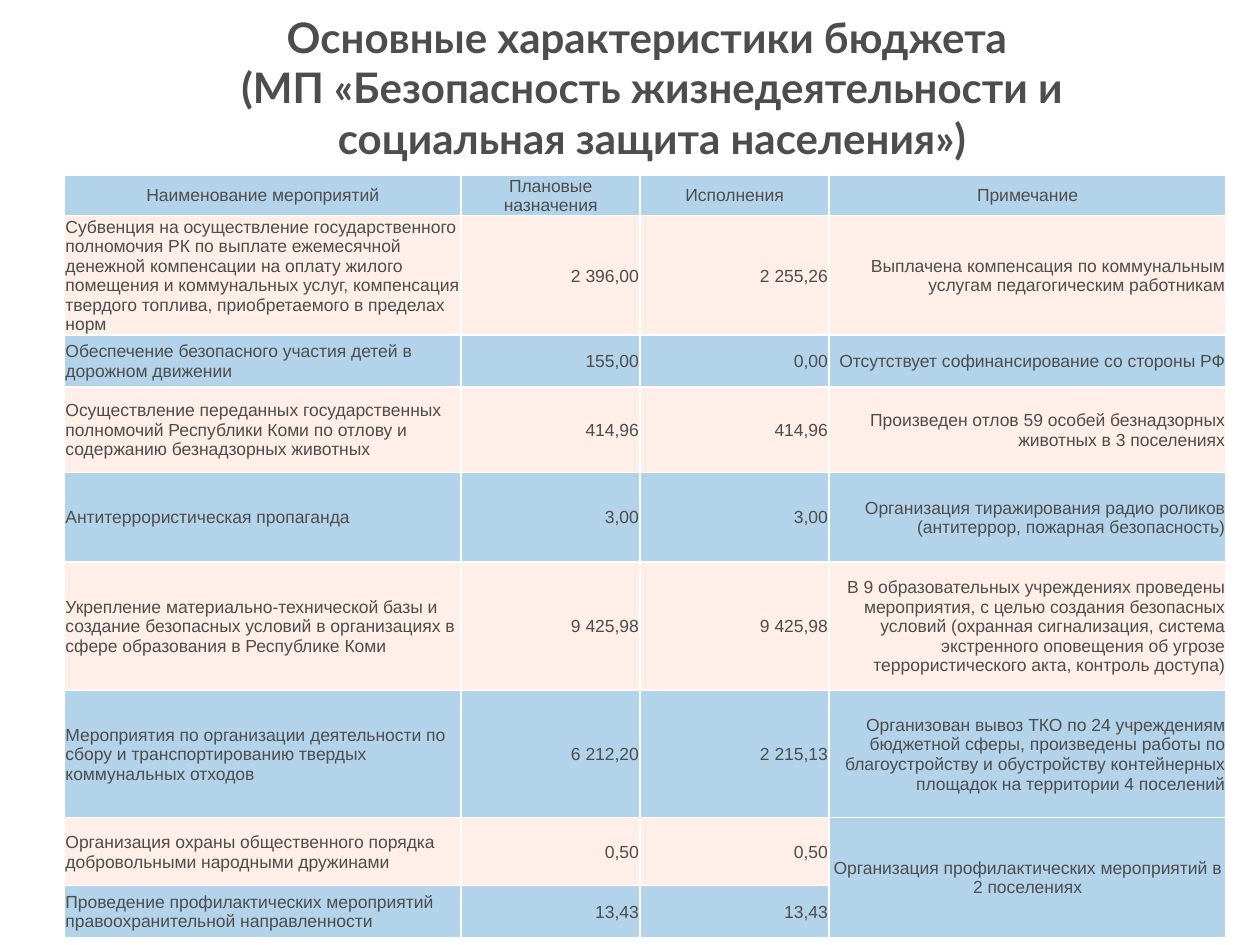
from dataclasses import dataclass
from lxml.etree import SubElement
from pptx import Presentation
from pptx.dml.color import RGBColor as Rgb
from pptx.enum.text import MSO_ANCHOR as Anchor, MSO_AUTO_SIZE as Fit, PP_ALIGN as Align
from pptx.oxml.ns import qn
from pptx.util import Inches, Pt

# Content
TITLE = [
    "Основные характеристики бюджета ",
    "(МП «Безопасность жизнедеятельности и социальная защита населения»)",
]
HEAD = ("Наименование мероприятий", "Плановые назначения", "Исполнения", "Примечание")
ROWS = [
    ("Субвенция на осуществление государственного полномочия РК по выплате ежемесячной "
     "денежной компенсации на оплату жилого помещения и коммунальных услуг, компенсация "
     "твердого топлива, приобретаемого в пределах норм",
     "2 396,00", "2 255,26",
     "Выплачена компенсация по коммунальным услугам педагогическим работникам"),
    ("Обеспечение безопасного участия детей в дорожном движении",
     "155,00", "0,00", "Отсутствует софинансирование со стороны РФ"),
    ("Осуществление переданных государственных полномочий Республики Коми по отлову "
     "и содержанию безнадзорных животных",
     "414,96", "414,96",
     "Произведен отлов 59 особей безнадзорных животных в 3 поселениях"),
    ("Антитеррористическая пропаганда", "3,00", "3,00",
     "Организация тиражирования радио роликов (антитеррор, пожарная безопасность)"),
    ("Укрепление материально-технической базы и создание безопасных условий "
     "в организациях в сфере образования в Республике Коми",
     "9 425,98", "9 425,98",
     "В 9 образовательных учреждениях проведены мероприятия, с целью создания безопасных "
     "условий (охранная сигнализация, система экстренного оповещения об угрозе "
     "террористического акта, контроль доступа)"),
    ("Мероприятия по организации деятельности по сбору и транспортированию твердых "
     "коммунальных отходов",
     "6 212,20", "2 215,13",
     "Организован вывоз ТКО по 24 учреждениям бюджетной сферы, произведены работы по "
     "благоустройству и обустройству контейнерных площадок на территории 4 поселений"),
    ("Организация охраны общественного порядка добровольными народными дружинами",
     "0,50", "0,50", "Организация профилактических мероприятий в 2 поселениях"),
    ("Проведение профилактических мероприятий правоохранительной направленности",
     "13,43", "13,43", None),
]
COLS = (3.15, 1.42, 1.5, 3.15)
TALL = (0.27, 0.95, 0.41, 0.68, 0.71, 1.02, 1.01, 0.54, 0.41)
NOTE = (len(ROWS) - 1, len(COLS) - 1)  # the note shared by the last two rows


@dataclass(frozen=True)
class Theme:
    ink: str = "4D4D4D"
    blue: str = "B3D3EA"
    pink: str = "FFEFE8"
    rule: str = "FFFFFF"
    title: tuple = ("Lato", 24, True)
    body: tuple = ("Arial", 10, False)


THEME = Theme()


def write(para, text, style, align):
    para.alignment = align
    run = para.add_run()
    run.text = text
    font = run.font
    font.name, size, font.bold = style
    font.size = Pt(size)
    font.color.rgb = Rgb.from_string(THEME.ink)


def edge(cell):
    props = cell._tc.get_or_add_tcPr()
    for at, side in enumerate(("lnL", "lnR", "lnT", "lnB")):
        line = props.makeelement(qn("a:" + side), {"w": str(Pt(1))})
        fill = SubElement(line, qn("a:solidFill"))
        SubElement(fill, qn("a:srgbClr"), val=THEME.rule)
        props.insert(at, line)


def dress(cell, color):
    cell.fill.solid()
    cell.fill.fore_color.rgb = Rgb.from_string(color)
    cell.vertical_anchor = Anchor.MIDDLE
    cell.margin_left = cell.margin_right = cell.margin_top = Inches(0.01)
    cell.margin_bottom = 0
    edge(cell)


def place(row, col):
    if row == 0 or (row, col) == NOTE:
        return Align.CENTER
    return Align.RIGHT if col else Align.LEFT


def main():
    deck = Presentation()
    deck.slide_width, deck.slide_height = Inches(10), Inches(7.5)
    slide = deck.slides.add_slide(deck.slide_layouts[5])

    # Title
    title = slide.shapes.title
    title.left, title.top = Inches(1.3), Inches(0.09)
    title.width, title.height = Inches(7.75), Inches(1.2)
    frame = title.text_frame
    frame.auto_size, frame.word_wrap = Fit.NONE, True
    frame.vertical_anchor = Anchor.MIDDLE
    frame.margin_top = frame.margin_bottom = 0
    para = frame.paragraphs[0]
    for i, text in enumerate(TITLE):
        if i:
            para.add_line_break()
        write(para, text, THEME.title, Align.CENTER)

    # Table grid
    grid = slide.shapes.add_table(
        len(TALL), len(COLS), Inches(0.51), Inches(1.39),
        Inches(sum(COLS)), Inches(sum(TALL))).table
    for col, wide in zip(grid.columns, COLS):
        col.width = Inches(wide)
    for row, tall in zip(grid.rows, TALL):
        row.height = Inches(tall)

    # Cells
    for r, texts in enumerate([HEAD, *ROWS]):
        for c, text in enumerate(texts):
            cell = grid.cell(r, c)
            odd = r % 2 and (r, c) != NOTE
            dress(cell, THEME.pink if odd else THEME.blue)
            if text:
                write(cell.text_frame.paragraphs[0], text, THEME.body, place(r, c))
    grid.cell(*NOTE).merge(grid.cell(NOTE[0] + 1, NOTE[1]))

    deck.save("out.pptx")


if __name__ == "__main__":
    main()
